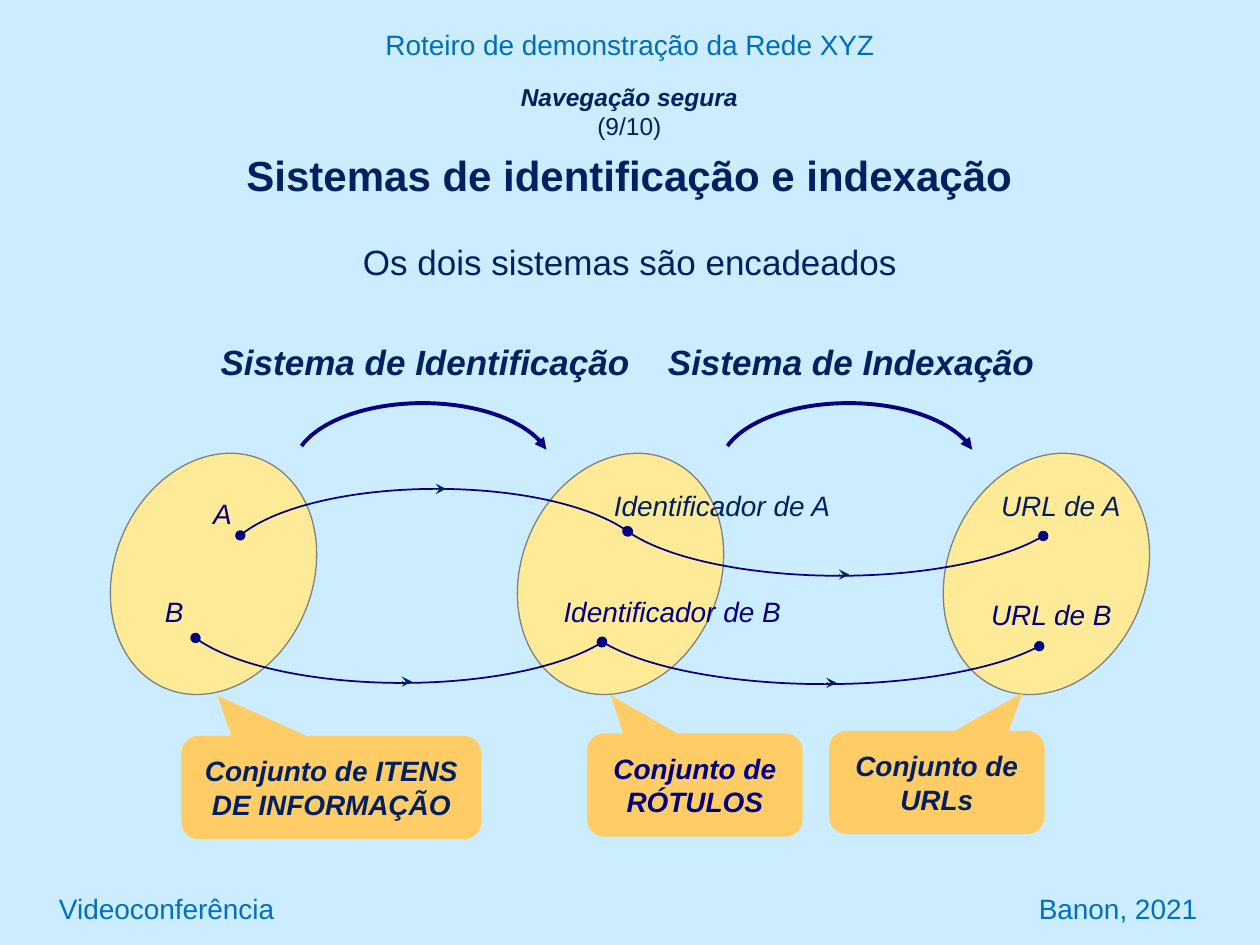
from pptx import Presentation
from pptx import util as u
from pptx.dml import color
from pptx.enum import shapes, text
from pptx.oxml import ns, xmlchemy

NAVY, BLUE = "002060", "000080"
KIND = shapes.MSO_SHAPE


def rgb(code):
    return color.RGBColor.from_string(code)


def box(*nums):
    return [u.Inches(num) for num in nums]


class Board:
    font = "Arial"
    sand, gold, edge = "FFEB97", "FFCC66", "808080"

    def __init__(self, slide):
        self.slide = slide
        self.items = slide.shapes

    def run(self, para, words, size, ink=NAVY, bold=False, slant=False):
        run = para.add_run()
        run.text = words
        face = run.font
        face.name, face.size = self.font, u.Pt(size)
        face.bold, face.italic = bold, slant
        face.color.rgb = rgb(ink)

    def label(self, area, words, size=16, ink=NAVY, bold=False, slant=True,
              wrap=False, align=text.PP_ALIGN.CENTER):
        frame = self.items.add_textbox(*box(*area)).text_frame
        frame.word_wrap = wrap
        frame.auto_size = text.MSO_AUTO_SIZE.SHAPE_TO_FIT_TEXT
        para = frame.paragraphs[0]
        para.alignment = align
        self.run(para, words, size, ink, bold, slant)

    def title(self, area, top, count, main):
        title = self.items.title
        title.left, title.top, title.width, title.height = box(*area)
        frame = title.text_frame
        frame.word_wrap = True
        frame.auto_size = text.MSO_AUTO_SIZE.NONE
        frame.vertical_anchor = text.MSO_ANCHOR.TOP
        first, last = frame.paragraphs[0], frame.add_paragraph()
        first.alignment = last.alignment = text.PP_ALIGN.CENTER
        self.run(first, top, 14, bold=True, slant=True)
        first.add_line_break()
        self.run(first, count, 14)
        last.space_before = u.Pt(4.8)
        self.run(last, main, 24, bold=True)

    def shape(self, kind, area, fill=None):
        shape = self.items.add_shape(kind, *box(*area))
        shape.shadow.inherit = False
        if fill:
            shape.fill.solid()
            shape.fill.fore_color.rgb = rgb(fill)
        else:
            shape.fill.background()
        return shape

    def stroke(self, item, ink, width, **ends):
        item.line.color.rgb = rgb(ink)
        item.line.width = u.Pt(width)
        line = item.element.spPr.find(ns.qn("a:ln"))
        for name, kind in ends.items():
            tip = xmlchemy.OxmlElement(f"a:{name}End")
            tip.set("type", kind)
            line.append(tip)

    def oval(self, left):
        oval = self.shape(KIND.OVAL, (left, 3.57, 1.57, 1.97), self.sand)
        oval.rotation = 23
        self.stroke(oval, self.edge, 0.75)

    def arc(self, area, span, width, flip=False, **ends):
        arc = self.shape(KIND.ARC, area)
        arc.adjustments[0], arc.adjustments[1] = span
        if flip:
            arc.element.spPr.find(ns.qn("a:xfrm")).set("flipV", "1")
        self.stroke(arc, BLUE, width, **ends)

    def sweep(self, left):
        self.arc((left, 3.2, 2.05, 1.04), (114.33, 210.79), 2.25, tail="triangle")

    def link(self, left, top, width, tip, flip=True):
        self.arc((left, top, width, 1.22), (113.27, 209.83), 1, flip,
                 head="oval", tail="oval")
        level = top + 1.21 if flip else top
        line = self.items.add_connector(
            shapes.MSO_CONNECTOR.STRAIGHT, *box(tip - 0.08, level, tip, level))
        self.stroke(line, NAVY, 0.75, tail="stealth")
        line.element.spPr.append(xmlchemy.OxmlElement("a:effectLst"))

    def callout(self, area, words, tip, ink=NAVY):
        note = self.shape(KIND.ROUNDED_RECTANGULAR_CALLOUT, area, self.gold)
        note.line.fill.background()
        note.adjustments[0], note.adjustments[1] = tip
        frame = note.text_frame
        frame.word_wrap = True
        frame.vertical_anchor = text.MSO_ANCHOR.MIDDLE
        para = frame.paragraphs[0]
        para.alignment = text.PP_ALIGN.CENTER
        self.run(para, words, 16, ink, True, True)


def main():
    deck = Presentation()
    deck.slide_width, deck.slide_height = box(10, 7.5)
    slide = deck.slides.add_slide(deck.slide_layouts[5])
    slide.background.fill.solid()
    slide.background.fill.fore_color.rgb = rgb("CCECFF")
    board = Board(slide)

    board.title((0.23, 0.6, 9.53, 0.98), "Navegação segura", "(9/10)",
                "Sistemas de identificação e indexação")
    board.label((0, 0.17, 10, 0.37), "Roteiro de demonstração da Rede XYZ",
                ink="006FBA", slant=False, wrap=True)
    sides = text.PP_ALIGN
    for left, words, align in ((0.37, "Videoconferência", sides.LEFT),
                               (5.1, "Banon, 2021", sides.RIGHT)):
        board.label((left, 7.03, 4.5, 0.37), words, ink="0070C0", slant=False,
                    wrap=True, align=align)
    board.label((2.18, 1.86, 5.64, 0.44), "Os dois sistemas são encadeados",
                20, slant=False, wrap=True)

    for left in (0.91, 4.14, 7.52):
        board.oval(left)
    for left in (2.33, 5.71):
        board.sweep(left)
    board.link(1.77, 3.88, 3.39, 3.54, flip=False)
    for left, top, width, tip in ((1.39, 4.2, 3.6, 3.27), (4.81, 3.35, 3.7, 6.74),
                                  (4.57, 4.21, 3.95, 6.64)):
        board.link(left, top, width, tip)

    board.callout((1.44, 5.84, 2.38, 0.82), "Conjunto de ITENS DE INFORMAÇÃO",
                  (-0.38, -0.89))
    board.callout((4.66, 5.82, 1.71, 0.82), "Conjunto de RÓTULOS",
                  (-0.39, -0.87), BLUE)
    board.callout((6.58, 5.8, 1.71, 0.82), "Conjunto de URLs", (0.4, -0.87))

    for left, width, words in ((1.64, 3.47, "Sistema de Identificação"),
                               (5.19, 3.13, "Sistema de Indexação")):
        board.label((left, 2.65, width, 0.44), words, 20, bold=True)
    for left, top, width, words, ink in (
            (1.59, 3.89, 0.35, "A", BLUE),
            (1.21, 4.67, 0.34, "B", BLUE),
            (4.73, 3.83, 2, "Identificador de A", NAVY),
            (4.36, 4.67, 1.95, "Identificador de B", BLUE),
            (7.84, 3.83, 1.16, "URL de A", NAVY),
            (7.76, 4.69, 1.17, "URL de B", BLUE)):
        board.label((left, top, width, 0.37), words, ink=ink)

    deck.save("out.pptx")


if __name__ == "__main__":
    main()
